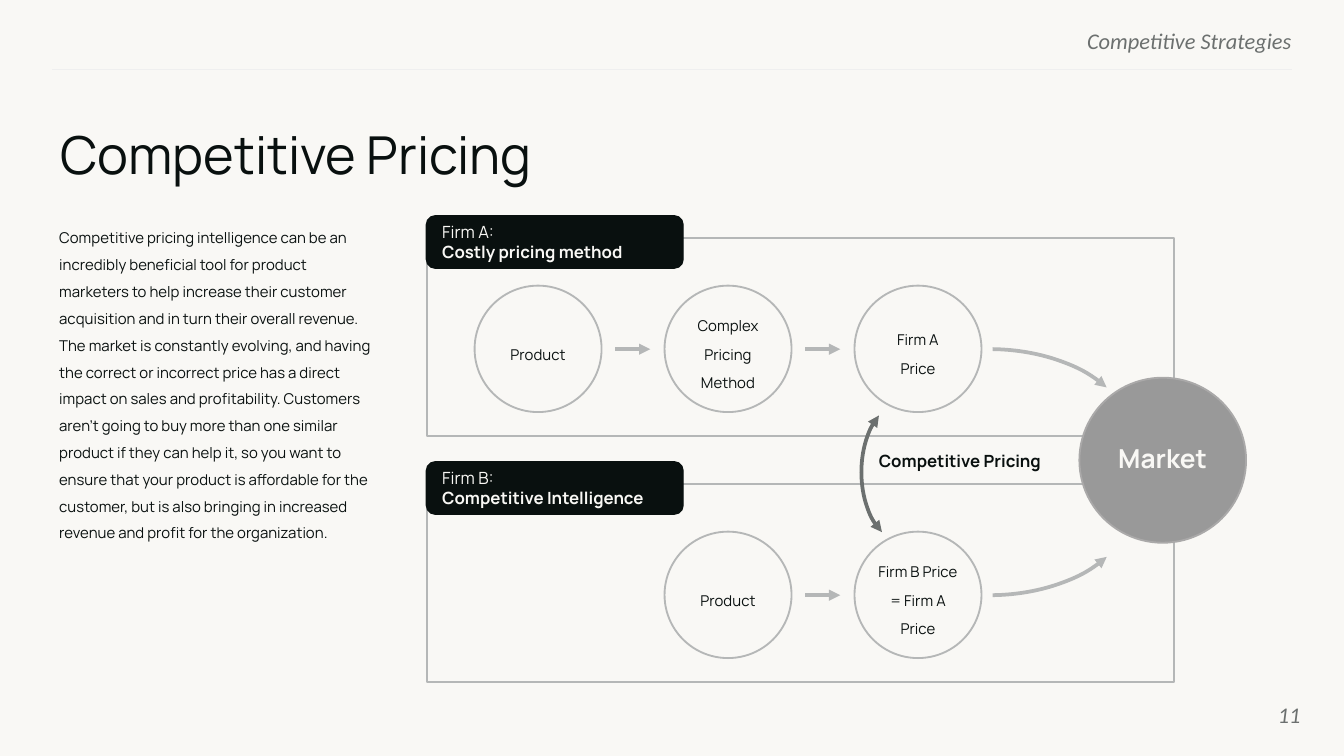
import dataclasses

import lxml.etree
import pptx
import pptx.dml.color
import pptx.enum.shapes
import pptx.enum.text
import pptx.oxml.ns
import pptx.util

Cm = pptx.util.Cm
Pt = pptx.util.Pt
RGB = pptx.dml.color.RGBColor.from_string
qn = pptx.oxml.ns.qn
SHAPE = pptx.enum.shapes.MSO_SHAPE
STRAIGHT = pptx.enum.shapes.MSO_CONNECTOR.STRAIGHT
ALIGN = pptx.enum.text.PP_ALIGN
ANCHOR = pptx.enum.text.MSO_ANCHOR


@dataclasses.dataclass(frozen=True)
class Theme:
    paper: str = "F9F8F5"
    ink: str = "09100F"
    muted: str = "6C706F"
    outline: str = "B5B7B7"
    rule: str = "EFEFEF"
    market: str = "999999"
    market_edge: str = "AAA9A9"
    font: str = "Manrope"
    furniture_font: str = "Calibri"
    title: int = 28
    market_size: int = 14
    furniture: int = 12
    label: int = 9
    body: int = 8


theme = Theme()


def write(shape, text, size, color=theme.ink, font=theme.font, bold=False, italic=False,
          align=ALIGN.LEFT, anchor=ANCHOR.MIDDLE, spacing=None, after=None, insets=(0, 0, 0, 0)):
    frame = shape.text_frame
    frame.word_wrap = True
    frame.vertical_anchor = anchor
    frame.margin_left, frame.margin_top, frame.margin_right, frame.margin_bottom = map(Cm, insets)
    frame.text = text
    for paragraph in frame.paragraphs:
        paragraph.alignment = align
        paragraph.line_spacing = spacing
        paragraph.space_after = after
        run_font = paragraph.runs[0].font
        run_font.name, run_font.size = font, Pt(size)
        run_font.bold, run_font.italic = bold, italic
        run_font.color.rgb = RGB(color)


def paint(shape, line, width, fill=None, heads=()):
    shape.line.color.rgb = RGB(line)
    shape.line.width = Pt(width)
    if fill:
        shape.fill.solid()
        shape.fill.fore_color.rgb = RGB(fill)
    elif hasattr(shape, "fill"):
        shape.fill.background()
    properties = shape._element.spPr
    for head in heads:
        lxml.etree.SubElement(properties.find(qn("a:ln")), qn(f"a:{head}"), type="triangle")
    lxml.etree.SubElement(properties, qn("a:effectLst"))


deck = pptx.Presentation()
deck.slide_width, deck.slide_height = Cm(25.4), Cm(14.29)
slide = deck.slides.add_slide(deck.slide_layouts[5])
slide.background.fill.solid()
slide.background.fill.fore_color.rgb = RGB(theme.paper)
shapes = slide.shapes

# Header, rule and page number
furniture = dict(size=theme.furniture, color=theme.muted, font=theme.furniture_font,
                 italic=True, align=ALIGN.RIGHT)
section = shapes.add_textbox(Cm(14.63), Cm(0.51), Cm(9.78), Cm(0.46))
write(section, "Competitive Strategies", anchor=ANCHOR.TOP, **furniture)
header_rule = shapes.add_connector(STRAIGHT, Cm(0.99), Cm(1.31), Cm(24.41), Cm(1.31))
paint(header_rule, theme.rule, 0.75)
page_number = shapes.add_textbox(Cm(23.06), Cm(12.97), Cm(1.52), Cm(1.09))
write(page_number, "11", **furniture)

# Title and explanation
title = shapes.title
title.left, title.top, title.width, title.height = Cm(1.14), Cm(2.31), Cm(11.56), Cm(1.3)
write(title, "Competitive Pricing", theme.title, anchor=ANCHOR.TOP, after=Pt(10))
title.text_frame.paragraphs[0].runs[0]._r.get_or_add_rPr().set("kern", "0")
explanation = shapes.add_textbox(Cm(0.94), Cm(3.98), Cm(6.33), Cm(6.88))
write(explanation,
      "Competitive pricing intelligence can be an incredibly beneficial tool for product "
      "marketers to help increase their customer acquisition and in turn their overall revenue. "
      "The market is constantly evolving, and having the correct or incorrect price has a direct "
      "impact on sales and profitability. Customers aren’t going to buy more than one similar "
      "product if they can help it, so you want to ensure that your product is affordable for "
      "the customer, but is also bringing in increased revenue and profit for the organization.",
      theme.body, anchor=ANCHOR.TOP, spacing=1.5, insets=(0.18, 0.18, 0.18, 0.18))

# Firms: frame, label, and steps that end in the same column
firms = [
    ("Firm A:\nCostly pricing method", ["Product", "Complex Pricing Method", "Firm A Price"]),
    ("Firm B:\nCompetitive Intelligence", ["Product", "Firm B Price\n= Firm A Price"]),
]
FIRST_TOP, FIRM_PITCH = 4.5, 4.65
FIRST_STEP, STEP_PITCH, STEP_WIDTH, COLUMNS = 8.97, 3.59, 2.4, 3
for row, (firm_name, steps) in enumerate(firms):
    top = FIRST_TOP + row * FIRM_PITCH
    firm_frame = shapes.add_shape(SHAPE.RECTANGLE, Cm(8.07), Cm(top), Cm(14.12), Cm(3.75))
    paint(firm_frame, theme.outline, 1, theme.paper)

    firm_label = shapes.add_shape(SHAPE.ROUNDED_RECTANGLE, Cm(8.06), Cm(top - 0.42),
                                  Cm(4.85), Cm(0.99))
    paint(firm_label, theme.ink, 0.75, theme.ink)
    write(firm_label, firm_name, theme.label, theme.paper, bold=True,
          insets=(0.25, 0.25, 0.25, 0.25))
    firm_label.text_frame.paragraphs[0].runs[0].font.bold = False

    for column, step_text in enumerate(steps, COLUMNS - len(steps)):
        left = FIRST_STEP + column * STEP_PITCH
        step = shapes.add_shape(SHAPE.OVAL, Cm(left), Cm(top + 0.9), Cm(STEP_WIDTH), Cm(2.39))
        paint(step, theme.outline, 1, theme.paper)
        side = 0 if "\n" in step_text else 0.18
        write(step, step_text, theme.body, align=ALIGN.CENTER, spacing=1.6,
              insets=(side, 0.1, side, 0.1))
        if column < COLUMNS - 1:
            start = left + STEP_WIDTH + 0.26
            next_arrow = shapes.add_connector(STRAIGHT, Cm(start), Cm(top + 2.1),
                                              Cm(start + 0.66), Cm(top + 2.1))
            paint(next_arrow, theme.outline, 2, heads=["tailEnd"])

# Market
market = shapes.add_shape(SHAPE.OVAL, Cm(20.4), Cm(7.14), Cm(3.15), Cm(3.12))
paint(market, theme.market_edge, 1, theme.market)
write(market, "Market", theme.market_size, theme.paper, bold=True, align=ALIGN.CENTER,
      spacing=0.89, insets=(0.18, 0.1, 0.18, 0.1))

# Curved arrows: box, rotation, mirrored, arc angles, colour, heads
curves = [
    ((15.98, 6.6, 5.44, 3.45), 0, True, (204.3, 268), theme.outline, ["headEnd"]),
    ((15.98, 7.8, 5.44, 3.45), 180, False, (204.3, 268), theme.outline, ["headEnd"]),
    ((15.77, 8.1, 2.67, 1.65), 270, True, (204.7, 339), theme.muted, ["headEnd", "tailEnd"]),
]
for box, rotation, mirrored, angles, color, heads in curves:
    curve = shapes.add_shape(SHAPE.ARC, *map(Cm, box))
    curve.rotation = rotation
    if mirrored:
        curve._element.spPr.find(qn("a:xfrm")).set("flipH", "1")
    for index, angle in enumerate(angles):
        curve.adjustments[index] = angle * 0.6  # 60000 units per degree, stored per 100000
    paint(curve, color, 2, heads=heads)

# Caption between the two prices
price_link = shapes.add_textbox(Cm(16.43), Cm(8.46), Cm(3.66), Cm(0.56))
write(price_link, "Competitive Pricing", theme.label, bold=True, insets=(0.18, 0, 0.18, 0.05))

deck.save("out.pptx")
